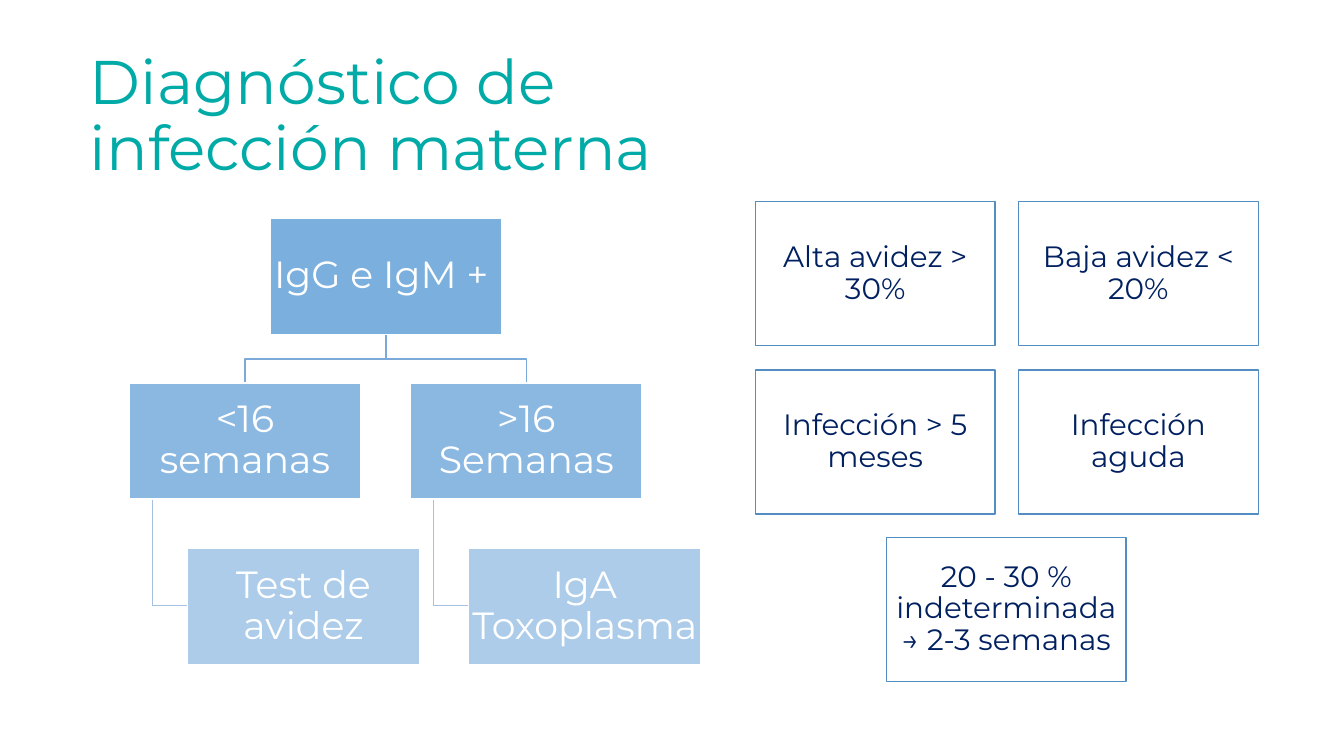
from pptx import Presentation
from pptx.dml.color import RGBColor
from pptx.enum.shapes import MSO_SHAPE
from pptx.enum.text import MSO_ANCHOR, MSO_AUTO_SIZE, PP_ALIGN
from pptx.oxml.ns import qn
from pptx.util import Pt
from lxml.etree import SubElement

PX = 9144
FONT = "Montserrat"


def color(value):
    return RGBColor.from_string(value)


def style_text(frame, text, size, ink, align):
    frame.text = text
    frame.word_wrap = True
    frame.auto_size = MSO_AUTO_SIZE.NONE
    frame.vertical_anchor = MSO_ANCHOR.MIDDLE
    paragraph = frame.paragraphs[0]
    paragraph.alignment = align
    paragraph.line_spacing = 0.9
    font = paragraph.runs[0].font
    font.name, font.size = FONT, Pt(size)
    font.color.rgb = color(ink)


prs = Presentation()
prs.slide_width, prs.slide_height = 1333 * PX, 750 * PX
slide = prs.slides.add_slide(prs.slide_layouts[5])
shapes = slide.shapes

title = shapes.title
title.left, title.top, title.width, title.height = 79 * PX, 44 * PX, 704 * PX, 145 * PX
style_text(title.text_frame, "Diagnóstico de infección materna", 44, "00AAA7", PP_ALIGN.LEFT)

STEP_W, STEP_H = 230, 115
ROOT_X, ROOT_Y = 268, 217
WEEKS_Y, TEST_Y = 380, 544
TEST_INDENT, BRANCH_INDENT = 58, 23
root_center, root_bottom = ROOT_X + STEP_W // 2, ROOT_Y + STEP_H
fork_y = (root_bottom + WEEKS_Y) // 2
test_middle = TEST_Y + STEP_H // 2

branches = [(128, "<16 semanas", "Test de avidez"), (407, ">16 Semanas", "IgA Toxoplasma")]
links = []
steps = [(ROOT_X, ROOT_Y, "IgG e IgM + ", 80)]
for x, weeks, test in branches:
    weeks_center, branch_x = x + STEP_W // 2, x + BRANCH_INDENT
    links += [
        ("7AA9DA", [(root_center, root_bottom), (root_center, fork_y),
                    (weeks_center, fork_y), (weeks_center, WEEKS_Y)]),
        ("A5C0E3", [(branch_x, WEEKS_Y + STEP_H), (branch_x, test_middle),
                    (x + TEST_INDENT, test_middle)]),
    ]
    steps += [(x, WEEKS_Y, weeks, 70), (x + TEST_INDENT, TEST_Y, test, 50)]

for ink, points in links:
    builder = shapes.build_freeform(*points[0], scale=PX)
    builder.add_line_segments(points[1:], close=False)
    link = builder.convert_to_shape()
    link.shadow.inherit = False
    link.fill.background()
    link.line.color.rgb = color(ink)
    link.line.width = Pt(1)

CARD_W, CARD_H = 238, 143
CARD_X, CARD_Y, CARD_DX, CARD_DY = 749, 200, 261, 167
avidity = ["Alta avidez > 30%", "Baja avidez < 20%", "Infección > 5 meses", "Infección aguda"]
cards = [(CARD_X + i % 2 * CARD_DX, CARD_Y + i // 2 * CARD_DY, text)
         for i, text in enumerate(avidity)]
cards.append((CARD_X + CARD_DX // 2, CARD_Y + 2 * CARD_DY - 1,
              "20 - 30 % indeterminada → 2-3 semanas"))

boxes = [(x, y, STEP_W, STEP_H, text, 27, "FFFFFF", "5B9BD5", "FFFFFF", 2, alpha)
         for x, y, text, alpha in steps]
boxes += [(x, y, CARD_W, CARD_H, text, 21, "002060", "FFFFFF", "538DC1", 9, 100)
          for x, y, text in cards]

for x, y, w, h, text, size, ink, fill, border, inset, alpha in boxes:
    box = shapes.add_shape(MSO_SHAPE.RECTANGLE, x * PX, y * PX, w * PX, h * PX)
    box.shadow.inherit = False
    box.fill.solid()
    box.fill.fore_color.rgb = color(fill)
    if alpha < 100:
        tint = box._element.spPr.find(qn("a:solidFill")).find(qn("a:srgbClr"))
        SubElement(tint, qn("a:alpha"), val=str(alpha * 1000))
    box.line.color.rgb = color(border)
    box.line.width = Pt(1)
    frame = box.text_frame
    frame.margin_left = frame.margin_right = inset * PX
    frame.margin_top = frame.margin_bottom = inset * PX
    style_text(frame, text, size, ink, PP_ALIGN.CENTER)

prs.save("out.pptx")
